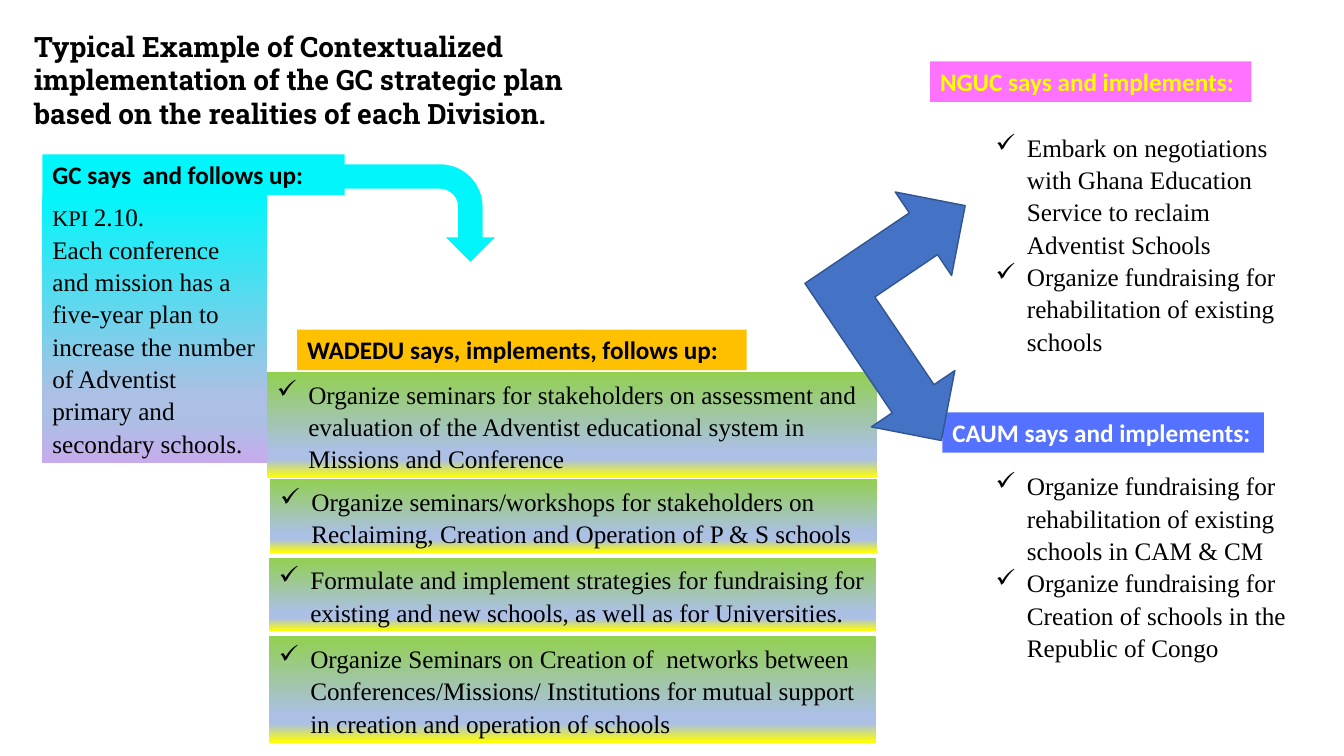
from dataclasses import dataclass

from lxml.etree import SubElement
from pptx import Presentation
from pptx.dml.color import RGBColor
from pptx.enum.shapes import MSO_SHAPE
from pptx.enum.text import MSO_AUTO_SIZE
from pptx.oxml.ns import qn
from pptx.util import Cm, Pt


@dataclass(frozen=True)
class Theme:
    title_font: str = "Roboto Slab"
    header_font: str = "Calibri"
    body_font: str = "Times New Roman"
    title_size: int = 20
    text_size: int = 18
    small_size: int = 16
    line_spacing: float = 1.07
    black: str = "000000"
    white: str = "FFFFFF"
    yellow: str = "FFFF00"
    cyan: str = "00F6FB"
    orange: str = "FFC000"
    pink: str = "FF72FF"
    blue: str = "5472FF"
    green: str = "92D050"
    mist: str = "ABC0E4"
    lilac: str = "C7ABED"
    arrow_blue: str = "4472C4"
    arrow_edge: str = "325491"


THEME = Theme()


def format_run(run, font, size, color=THEME.black, bold=False):
    run.font.name = font
    run.font.size = Pt(size)
    run.font.bold = bold
    run.font.color.rgb = RGBColor.from_string(color)


def fill_solid(shape, color):
    shape.fill.solid()
    shape.fill.fore_color.rgb = RGBColor.from_string(color)


def fill_gradient(shape, top, bottom):
    """Blend downwards from top to bottom through a band of mist."""
    shape.fill.gradient()
    shape.fill.gradient_angle = 270
    stop_list = shape.fill._fill._gradFill.find(qn("a:gsLst"))
    for stop in list(stop_list):
        stop_list.remove(stop)
    stops = ((0, top), (74, THEME.mist), (83, THEME.mist), (100, bottom))
    for percent, color in stops:
        stop = SubElement(stop_list, qn("a:gs"), pos=str(percent * 1000))
        SubElement(stop, qn("a:srgbClr"), val=color)


def add_check_mark(paragraph):
    properties = paragraph._p.get_or_add_pPr()
    indent = Cm(0.79)
    properties.set("marL", str(indent))
    properties.set("indent", str(-indent))
    SubElement(properties, qn("a:buChar"), char="✓")


def add_text(slide, box, text, font, size, color=THEME.black, bold=False):
    shape = slide.shapes.add_textbox(*(Cm(length) for length in box))
    text_frame = shape.text_frame
    text_frame.word_wrap = True
    text_frame.auto_size = MSO_AUTO_SIZE.SHAPE_TO_FIT_TEXT
    text_frame.text = text
    for paragraph in text_frame.paragraphs:
        for run in paragraph.runs:
            format_run(run, font, size, color, bold)
    return shape


def add_header(slide, left, top, width, text, fill, color=THEME.black):
    shape = add_text(slide, (left, top, width, 1.02), text,
                     THEME.header_font, THEME.text_size, color, bold=True)
    fill_solid(shape, fill)


def add_body(slide, box, text):
    shape = add_text(slide, box, text, THEME.body_font, THEME.text_size)
    for paragraph in shape.text_frame.paragraphs:
        paragraph.line_spacing = THEME.line_spacing
    return shape


def add_checklist(slide, box, items):
    shape = add_body(slide, box, "\n".join(items))
    for paragraph in shape.text_frame.paragraphs:
        add_check_mark(paragraph)
    return shape


def add_indicator(slide):
    shape = add_body(
        slide, (1.07, 4.9, 5.66, 6.78),
        "KPI \nEach conference and mission has a five-year plan to increase "
        "the number of Adventist primary and secondary schools.")
    fill_gradient(shape, THEME.cyan, THEME.lilac)
    heading = shape.text_frame.paragraphs[0]
    heading.runs[0].font.size = Pt(THEME.small_size)
    number = heading.add_run()
    number.text = "2.10."
    format_run(number, THEME.body_font, THEME.text_size)


def add_arrow(slide, kind, box, rotation, fill, edge=None):
    arrow = slide.shapes.add_shape(kind, *(Cm(length) for length in box))
    arrow.rotation = rotation
    arrow.shadow.inherit = False
    fill_solid(arrow, fill)
    if edge:
        arrow.line.color.rgb = RGBColor.from_string(edge)
        arrow.line.width = Pt(1)
    else:
        arrow.line.fill.background()


def main():
    presentation = Presentation()
    presentation.slide_width = Cm(33.87)
    presentation.slide_height = Cm(19.05)
    slide = presentation.slides.add_slide(presentation.slide_layouts[6])

    add_text(slide, (0.61, 0.61, 15.72, 2.82),
             "Typical Example of Contextualized implementation of the GC "
             "strategic plan based on the realities of each Division.",
             THEME.title_font, THEME.title_size, bold=True)
    add_indicator(slide)

    add_header(slide, 7.49, 8.31, 11.33,
               "WADEDU says, implements, follows up:", THEME.orange)
    division_actions = (
        ((6.73, 9.37, 15.37, 2.67),
         "Organize seminars for stakeholders on assessment and evaluation of "
         "the Adventist educational system in Missions and Conference"),
        ((6.81, 12.07, 15.29, 1.85),
         "Organize seminars/workshops for stakeholders on Reclaiming, "
         "Creation and Operation of P & S schools"),
        ((6.78, 14.05, 15.29, 1.85),
         "Formulate and implement strategies for fundraising for existing "
         "and new schools, as well as for Universities."),
        ((6.78, 16.03, 15.29, 2.67),
         "Organize Seminars on Creation of  networks between "
         "Conferences/Missions/ Institutions for mutual support in creation "
         "and operation of schools"),
    )
    for box, action in division_actions:
        shape = add_checklist(slide, box, [action])
        fill_gradient(shape, THEME.green, THEME.yellow)

    add_header(slide, 23.44, 1.55, 8.1, "NGUC says and implements:",
               THEME.pink, THEME.yellow)
    add_header(slide, 23.75, 10.39, 8.1, "CAUM says and implements:",
               THEME.blue, THEME.white)
    add_checklist(slide, (24.84, 3.15, 8.41, 5.97), [
        "Embark on negotiations with Ghana Education Service to reclaim "
        "Adventist Schools",
        "Organize fundraising for rehabilitation of existing schools",
    ])
    add_checklist(slide, (24.84, 11.68, 8.41, 5.13), [
        "Organize fundraising for rehabilitation of existing schools in "
        "CAM & CM",
        "Organize fundraising for Creation of schools in the Republic of "
        "Congo",
    ])

    add_arrow(slide, MSO_SHAPE.BENT_ARROW, (6.91, 1.04, 2.46, 8.66), 90,
              THEME.cyan)
    add_arrow(slide, MSO_SHAPE.LEFT_UP_ARROW, (20.6, 5.05, 5.08, 5.84), 146,
              THEME.arrow_blue, THEME.arrow_edge)
    add_header(slide, 1.07, 3.89, 7.62, "GC says  and follows up:", THEME.cyan)

    presentation.save("out.pptx")


if __name__ == "__main__":
    main()
